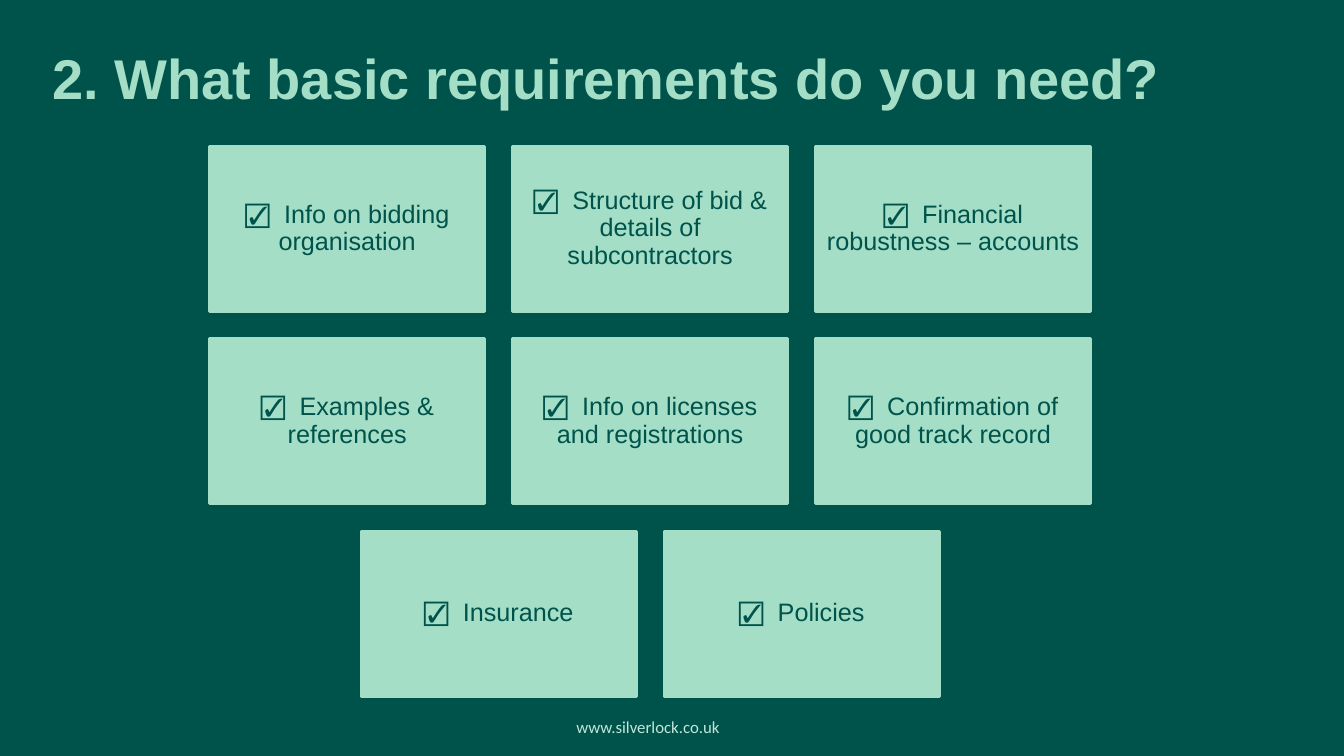
from pptx import Presentation
from pptx.dml.color import RGBColor
from pptx.enum.shapes import MSO_SHAPE as Preset
from pptx.enum.text import MSO_ANCHOR as Anchor, PP_ALIGN as Align
from pptx.util import Pt

DARK_GREEN, MINT, PALE_MINT = "00534B", "A4DEC7", "C0E7D7"

REQUIREMENTS = [
    ["Info on bidding organisation",
     "Structure of bid & details of subcontractors",
     "Financial robustness – accounts"],
    ["Examples & references",
     "Info on licenses and registrations",
     "Confirmation of good track record"],
    ["Insurance", "Policies"],
]

# Card grid, in points: each row is centred on the same axis
CARD_WIDTH, CARD_HEIGHT = 196.6, 118
COLUMN_STEP, ROW_STEP = 216.4, 137.5
GRID_CENTRE, GRID_TOP = 464.4, 104.4


def colour(hex_code):
    return RGBColor.from_string(hex_code)


def apply(target, formats):
    for name, value in formats.items():
        setattr(target, name, value)


def place(shape, left, top, width, height):
    apply(shape, {"left": Pt(left), "top": Pt(top),
                  "width": Pt(width), "height": Pt(height)})


def write(shape, text, align, anchor, hex_code, font_formats, inset=None):
    frame = shape.text_frame
    apply(frame, {"word_wrap": True, "vertical_anchor": anchor})
    if inset is not None:
        sides = ("left", "top", "right", "bottom")
        apply(frame, {f"margin_{side}": Pt(inset) for side in sides})
    paragraph = frame.paragraphs[0]
    paragraph.alignment = align
    run = paragraph.add_run()
    run.text = text
    apply(run.font, font_formats)
    run.font.color.rgb = colour(hex_code)
    return paragraph


def add_title(slide, text):
    title = slide.shapes.title
    place(title, 30.2, -7.2, 867.6, 90)
    write(title, text, Align.LEFT, Anchor.BOTTOM, MINT,
          {"name": "Arial", "size": Pt(40), "bold": True})


def add_card(slide, left, top, text):
    card = slide.shapes.add_shape(Preset.RECTANGLE, Pt(left), Pt(top),
                                  Pt(CARD_WIDTH), Pt(CARD_HEIGHT))
    card.shadow.inherit = False
    card.fill.solid()
    card.fill.fore_color.rgb = colour(MINT)
    card.line.color.rgb = colour(MINT)
    card.line.width = Pt(2)
    paragraph = write(card, f"☑  {text}", Align.CENTER, Anchor.MIDDLE, DARK_GREEN,
                      {"name": "Arial", "size": Pt(18)}, inset=5)
    paragraph.line_spacing = 0.9


def add_card_row(slide, top, texts):
    row_width = (len(texts) - 1) * COLUMN_STEP + CARD_WIDTH
    row_left = GRID_CENTRE - row_width / 2
    for column, text in enumerate(texts):
        add_card(slide, row_left + column * COLUMN_STEP, top, text)


def add_footer(slide, text):
    footer = slide.shapes.add_textbox(Pt(351.4), Pt(504.7), Pt(223), Pt(28.8))
    write(footer, text, Align.CENTER, Anchor.MIDDLE, PALE_MINT,
          {"name": "Calibri", "size": Pt(12)})


def main():
    presentation = Presentation()
    apply(presentation, {"slide_width": Pt(960), "slide_height": Pt(540)})
    slide = presentation.slides.add_slide(presentation.slide_layouts[5])

    # Background
    slide.background.fill.solid()
    slide.background.fill.fore_color.rgb = colour(DARK_GREEN)

    # Heading
    add_title(slide, "2. What basic requirements do you need?")

    # Requirement cards
    for row, texts in enumerate(REQUIREMENTS):
        add_card_row(slide, GRID_TOP + row * ROW_STEP, texts)

    # Web address
    add_footer(slide, "www.silverlock.co.uk")

    presentation.save("out.pptx")


if __name__ == "__main__":
    main()
